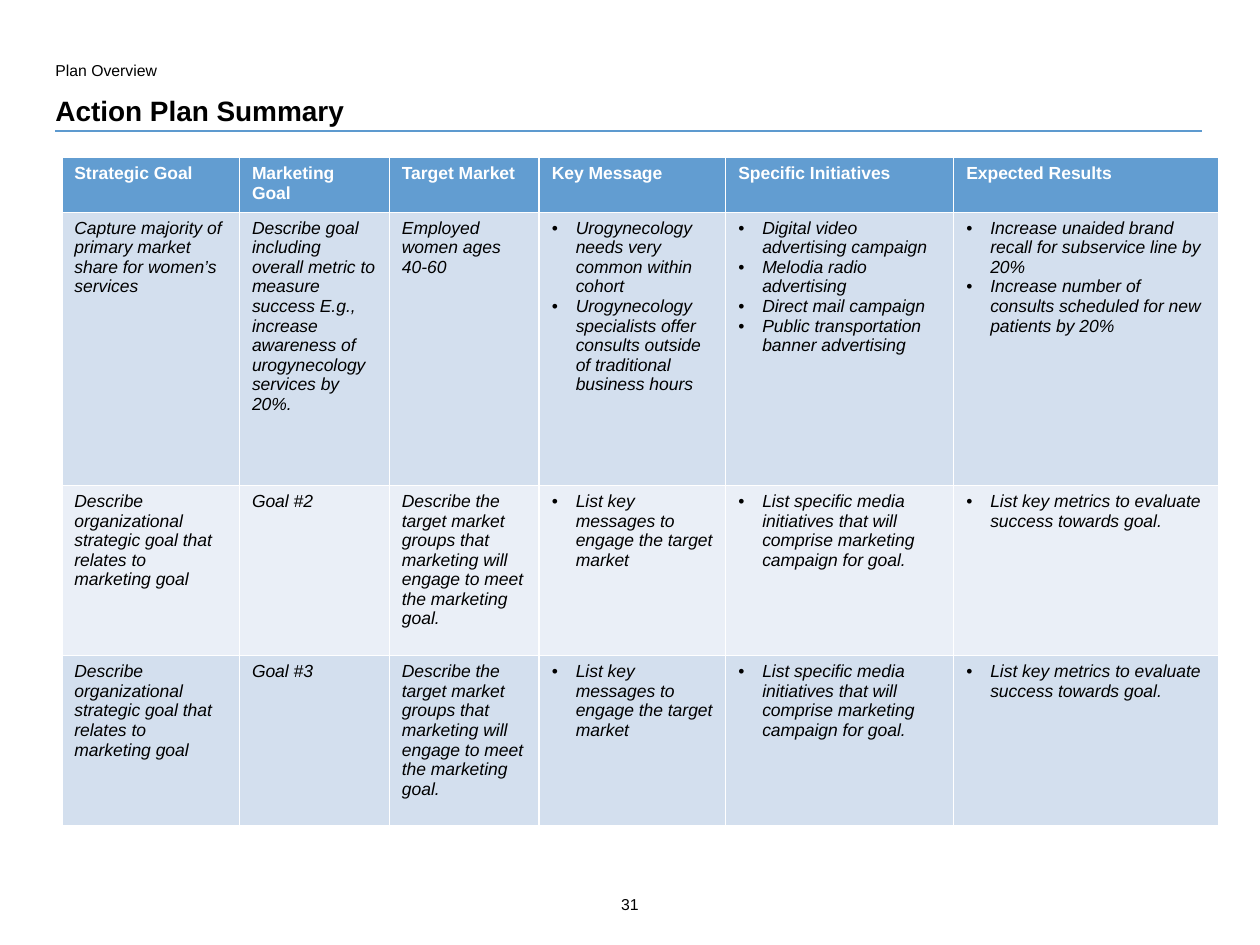
import pptx
import pptx.dml.color
import pptx.enum.shapes
import pptx.enum.text
import pptx.oxml
import pptx.oxml.ns
import pptx.util
from dataclasses import dataclass

SLIDE_WIDTH = pptx.util.Inches(10)
SLIDE_HEIGHT = pptx.util.Inches(7.5)
ANCHOR = pptx.enum.text.MSO_ANCHOR
ALIGN = pptx.enum.text.PP_ALIGN


@dataclass(frozen=True)
class Theme:
    font: str = "Arial"
    ink: str = "000000"
    header_ink: str = "FFFFFF"
    header_fill: str = "629DD1"
    bands: tuple = ("D3DFEE", "EAEFF7")
    rule: str = "5D9ACF"
    title_size: int = 16
    table_size: int = 10
    small_size: int = 9


THEME = Theme()

# Table grid: shares of the slide's width and height, in percent
COLUMN_SHARES = (14.1, 11.9, 11.9, 14.8, 18.1, 21)
ROW_SHARES = (5.4, 28.93, 18, 18)

HEADINGS = ("Strategic Goal", "Marketing Goal", "Target Market",
            "Key Message", "Specific Initiatives", "Expected Results")

# A list in a cell is shown as bullets
FIRST_GOAL = (
    "Capture majority of primary market share for women’s services",
    "Describe goal including overall metric to measure success E.g., "
    "increase awareness of urogynecology services by 20%.",
    "Employed women ages 40-60",
    ["Urogynecology needs very common within cohort",
     "Urogynecology specialists offer consults outside of traditional "
     "business hours"],
    ["Digital video advertising campaign",
     "Melodia radio advertising",
     "Direct mail campaign",
     "Public transportation banner advertising"],
    ["Increase unaided brand recall for subservice line by 20%",
     "Increase number of consults scheduled for new patients by 20%"],
)


def template_goal(number):
    return (
        "Describe organizational strategic goal that relates to marketing goal",
        f"Goal #{number}",
        "Describe the target market groups that marketing will engage to meet "
        "the marketing goal.",
        ["List key messages to engage the target market"],
        ["List specific media initiatives that will comprise marketing "
         "campaign for goal."],
        ["List key metrics to evaluate success towards goal."],
    )


def across(percent):
    return round(SLIDE_WIDTH * percent / 100)


def down(percent):
    return round(SLIDE_HEIGHT * percent / 100)


def rgb(value):
    return pptx.dml.color.RGBColor.from_string(value)


def set_all(target, values):
    for attribute, value in values.items():
        setattr(target, attribute, value)


def write(paragraph, text, color, size, **styles):
    run = paragraph.add_run()
    run.text = text
    set_all(run.font, {"name": THEME.font, "size": pptx.util.Pt(size), **styles})
    run.font.color.rgb = rgb(color)


def add_bullet(paragraph):
    indent = pptx.util.Inches(0.19)
    properties = paragraph._p.get_or_add_pPr()
    properties.set("marL", str(indent))
    properties.set("indent", str(-indent))
    namespace = pptx.oxml.ns.nsdecls("a")
    for element in (f'<a:buFont {namespace} typeface="{THEME.font}"/>',
                    f'<a:buChar {namespace} char="•"/>'):
        properties.append(pptx.oxml.parse_xml(element))


def add_label(slide, text, box, size, margins=(0, 0), anchor=ANCHOR.TOP,
              align=ALIGN.LEFT, **styles):
    left, top, width, height = box
    frame = slide.shapes.add_textbox(
        across(left), down(top), across(width), down(height)).text_frame
    side, edge = (pptx.util.Inches(margin) for margin in margins)
    set_all(frame, {"word_wrap": True, "vertical_anchor": anchor,
                    "margin_left": side, "margin_right": side,
                    "margin_top": edge, "margin_bottom": edge})
    frame.paragraphs[0].alignment = align
    write(frame.paragraphs[0], text, THEME.ink, size, **styles)


def add_rule(slide, left, right, height):
    rule = slide.shapes.add_connector(
        pptx.enum.shapes.MSO_CONNECTOR.STRAIGHT,
        across(left), down(height), across(right), down(height))
    rule.line.color.rgb = rgb(THEME.rule)
    rule.line.width = pptx.util.Pt(0.75)
    rule._element.spPr.append(pptx.oxml.parse_xml(
        f'<a:effectLst {pptx.oxml.ns.nsdecls("a")}/>'))


def fill_cell(cell, content, fill, color, **styles):
    cell.fill.solid()
    cell.fill.fore_color.rgb = rgb(fill)
    bulleted = isinstance(content, list)
    frame = cell.text_frame
    for index, text in enumerate(content if bulleted else [content]):
        paragraph = frame.add_paragraph() if index else frame.paragraphs[0]
        if bulleted:
            add_bullet(paragraph)
        write(paragraph, text, color, THEME.table_size, **styles)


def add_plan_table(slide, left, top, goals):
    plan = slide.shapes.add_table(
        len(ROW_SHARES), len(COLUMN_SHARES), across(left), down(top),
        across(sum(COLUMN_SHARES)), down(sum(ROW_SHARES))).table
    for column, share in zip(plan.columns, COLUMN_SHARES):
        column.width = across(share)
    for row, share in zip(plan.rows, ROW_SHARES):
        row.height = down(share)

    for cell, heading in zip(plan.rows[0].cells, HEADINGS):
        fill_cell(cell, heading, THEME.header_fill, THEME.header_ink,
                  bold=True, italic=False)
    for number, goal in enumerate(goals, start=1):
        band = THEME.bands[(number - 1) % len(THEME.bands)]
        for cell, content in zip(plan.rows[number].cells, goal):
            fill_cell(cell, content, band, THEME.ink, bold=False, italic=True)


def main():
    deck = pptx.Presentation()
    set_all(deck, {"slide_width": SLIDE_WIDTH, "slide_height": SLIDE_HEIGHT})
    slide = deck.slides.add_slide(deck.slide_layouts[6])

    # Heading
    add_rule(slide, 4.4, 95.4, 13.87)
    add_label(slide, "Plan Overview", (4.4, 5.87, 28.9, 2.67),
              THEME.small_size, margins=(0, 0.04))
    add_label(slide, "Action Plan Summary", (4.4, 9.87, 90.9, 3.6),
              THEME.title_size, anchor=ANCHOR.BOTTOM, bold=True)

    # Action plan
    add_plan_table(slide, 4.9, 16.67,
                   (FIRST_GOAL, template_goal(2), template_goal(3)))

    # Page number
    add_label(slide, "31", (46.6, 94.13, 6.8, 3.47), THEME.small_size,
              margins=(0.04, 0.04), align=ALIGN.CENTER)

    deck.save("out.pptx")


if __name__ == "__main__":
    main()
